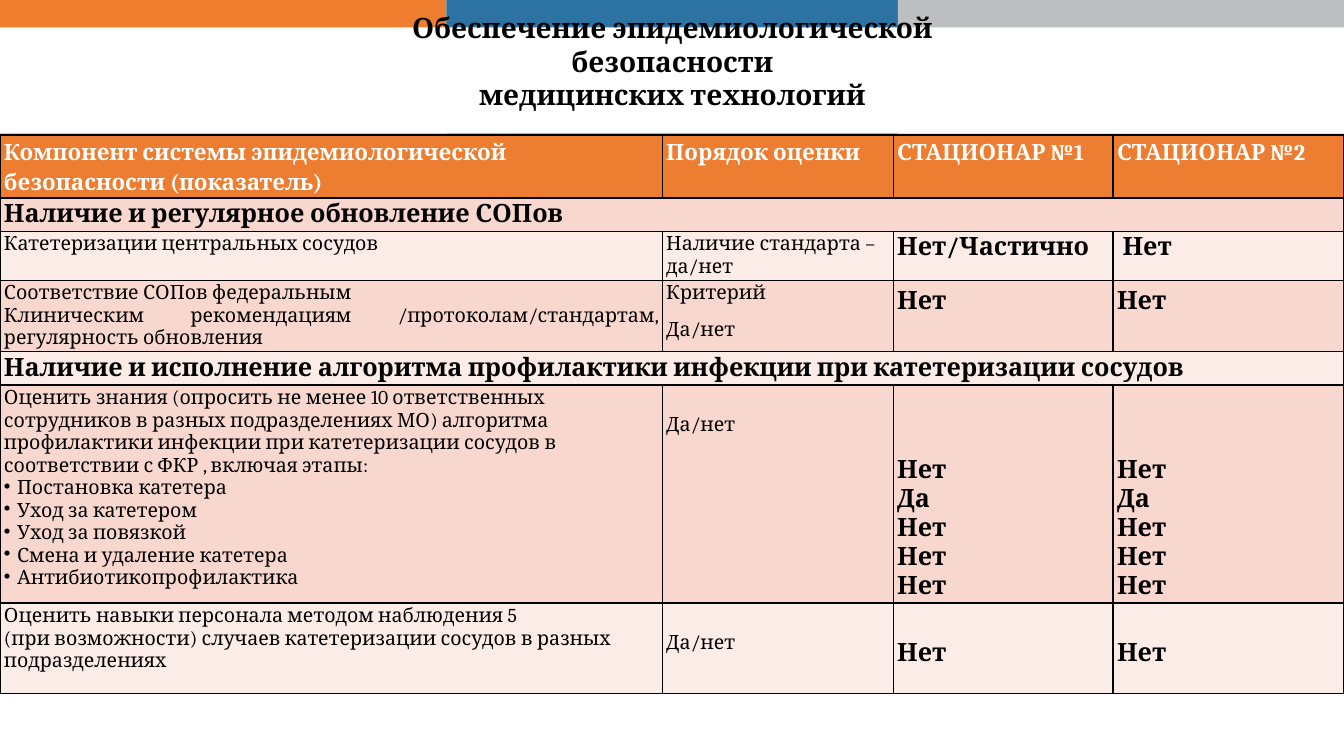
from lxml import etree
from pptx import Presentation
from pptx.dml.color import RGBColor
from pptx.enum.shapes import MSO_SHAPE
from pptx.enum.text import MSO_ANCHOR, PP_ALIGN
from pptx.oxml.ns import qn
from pptx.util import Cm, Pt

RECT = MSO_SHAPE.RECTANGLE
MIDDLE, TOP = MSO_ANCHOR.MIDDLE, MSO_ANCHOR.TOP
LEFT, CENTER, JUST = PP_ALIGN.LEFT, PP_ALIGN.CENTER, PP_ALIGN.JUSTIFY

# Content
FONT = "Cambria"
TITLE = ["Обеспечение эпидемиологической безопасности",
         "медицинских технологий"]
MARKS = ["Нет", "Да", "Нет", "Нет", "Нет"]
ROWS = [
    [["Компонент системы эпидемиологической безопасности (показатель)"],
     ["Порядок оценки"], ["СТАЦИОНАР №1"], ["СТАЦИОНАР №2"]],
    [["Наличие и регулярное обновление СОПов"]],
    [["Катетеризации центральных сосудов"],
     ["Наличие стандарта –да/нет"], ["Нет/Частично"], [" Нет"]],
    [["Соответствие СОПов федеральным",
      "Клиническим рекомендациям /протоколам/стандартам, регулярность обновления"],
     ["Критерий", "Да/нет"], ["Нет"], ["Нет"]],
    [["Наличие и исполнение алгоритма профилактики инфекции при катетеризации сосудов"]],
    [["Оценить знания (опросить не менее 10 ответственных сотрудников "
      "в разных подразделениях МО) алгоритма",
      "профилактики инфекции при катетеризации сосудов в соответствии с ФКР , включая этапы:",
      "• Постановка катетера", "• Уход за катетером", "• Уход за повязкой",
      "• Смена и удаление катетера", "• Антибиотикопрофилактика"],
     ["Да/нет"], MARKS, MARKS],
    [["Оценить навыки персонала методом наблюдения 5",
      "(при возможности) случаев катетеризации сосудов в разных подразделениях"],
     ["Да/нет"], ["Нет"], ["Нет"]],
]
WIDTHS = [16.69, 5.82, 5.54, 5.82]
HEIGHTS = [1.57, 0.82, 1.22, 1.79, 0.81, 5.2, 2.28]
HEAD, DARK, PALE = "ED7D31", "F8D7CE", "FCECE8"
BARS = [(0, 11.25, "EF7E2E"), (11.25, 11.38, "2C72A3"), (22.63, 11.24, "BDBEC0")]

# Lines left free above the text, and paragraph settings, by (row, column)
SKIP = {(5, 1): 1, (5, 2): 2, (5, 3): 2, (6, 1): 1, (6, 2): 1, (6, 3): 1}
SPACED = {(r, c) for r in (0, 3) for c in (1, 2, 3)}
JUSTIFIED = SPACED | {(2, 0), (3, 0)}
LOOSE = {(0, 0), (0, 1), (0, 2), (0, 3), (3, 2), (3, 3)}
LINE = 0.048  # line height in cm per point of type


def color(code):
    return RGBColor.from_string(code)


def style(para, size, bold, code):
    for run in para.runs:
        run.font.name, run.font.size, run.font.bold = FONT, Pt(size), bold
        run.font.color.rgb = color(code)


def add_bar(left, top, width, height, code, alpha=None):
    bar = slide.shapes.add_shape(RECT, Cm(left), Cm(top), Cm(width), Cm(height))
    bar.shadow.inherit = False
    bar.fill.solid()
    bar.fill.fore_color.rgb = color(code)
    bar.line.fill.background()
    if alpha:
        tint = bar._element.spPr.find(".//" + qn("a:srgbClr"))
        etree.SubElement(tint, qn("a:alpha"), val=str(alpha * 1000))


def add_bullet(para):
    props = para._p.get_or_add_pPr()
    props.set("marL", str(Cm(0.33)))
    props.set("indent", str(-Cm(0.33)))
    etree.SubElement(props, qn("a:buChar"), char="•")


def add_borders(cell):
    props = cell._tc.get_or_add_tcPr()
    for i, side in enumerate(("lnL", "lnR", "lnT", "lnB")):
        edge = etree.Element(qn("a:" + side), w=str(Pt(1)))
        fill = etree.SubElement(edge, qn("a:solidFill"))
        etree.SubElement(fill, qn("a:srgbClr"), val="000000")
        props.insert(i, edge)


def fill_cell(cell, spot, lines, size, bold, code):
    cell.margin_top = Cm(0.05 + SKIP.get(spot, 0) * size * LINE)
    frame = cell.text_frame
    for i, line in enumerate(lines):
        para = frame.paragraphs[0] if i == 0 else frame.add_paragraph()
        para.alignment = JUST if spot in JUSTIFIED else LEFT
        if spot in LOOSE:
            para.line_spacing = 1.15
        if spot in SPACED or spot == (0, 0):
            para.space_after = Pt(10)
        if line.startswith("• "):
            add_bullet(para)
        para.text = line.removeprefix("• ")
        style(para, size, bold, code)


deck = Presentation()
deck.slide_width, deck.slide_height = Cm(33.87), Cm(19.05)
slide = deck.slides.add_slide(deck.slide_layouts[5])

# Colour bars at the top and thin tinted bars above the table
for left, width, code in BARS:
    add_bar(left, 0, width, 0.69, code)
    add_bar(left, 3.35, width, 0.13, code, 47)

# Table
table = slide.shapes.add_table(len(ROWS), len(WIDTHS), Cm(0), Cm(3.4),
                               Cm(sum(WIDTHS)), Cm(sum(HEIGHTS))).table
table.first_row = table.horz_banding = False
for col, width in zip(table.columns, WIDTHS):
    col.width = Cm(width)
for r, texts in enumerate(ROWS):
    table.rows[r].height = Cm(HEIGHTS[r])
    band = len(texts) == 1
    if band:
        table.cell(r, 0).merge(table.cell(r, len(WIDTHS) - 1))
    for c in range(len(WIDTHS)):
        cell = table.cell(r, c)
        cell.margin_left = cell.margin_right = Cm(0.1)
        cell.margin_top = cell.margin_bottom = Cm(0.05)
        cell.vertical_anchor = TOP
        cell.fill.solid()
        cell.fill.fore_color.rgb = color(HEAD if r == 0 else DARK if r % 2 else PALE)
        add_borders(cell)
        if c < len(texts):
            strong = band or c > 1
            look = (16, True, "FFFFFF") if r == 0 else (18 if strong else 14, strong, "000000")
            fill_cell(cell, (r, c), texts[c], *look)

# Title, in front of the bars
title = slide.shapes.title
title.left, title.top, title.width, title.height = Cm(8), Cm(0.56), Cm(17.88), Cm(1.96)
frame = title.text_frame
frame.word_wrap = True
frame.vertical_anchor = MIDDLE
frame.text = "\n".join(TITLE)
for para in frame.paragraphs:
    para.alignment = CENTER
    style(para, 20, True, "000000")
slide.shapes._spTree.append(title._element)

deck.save("out.pptx")
